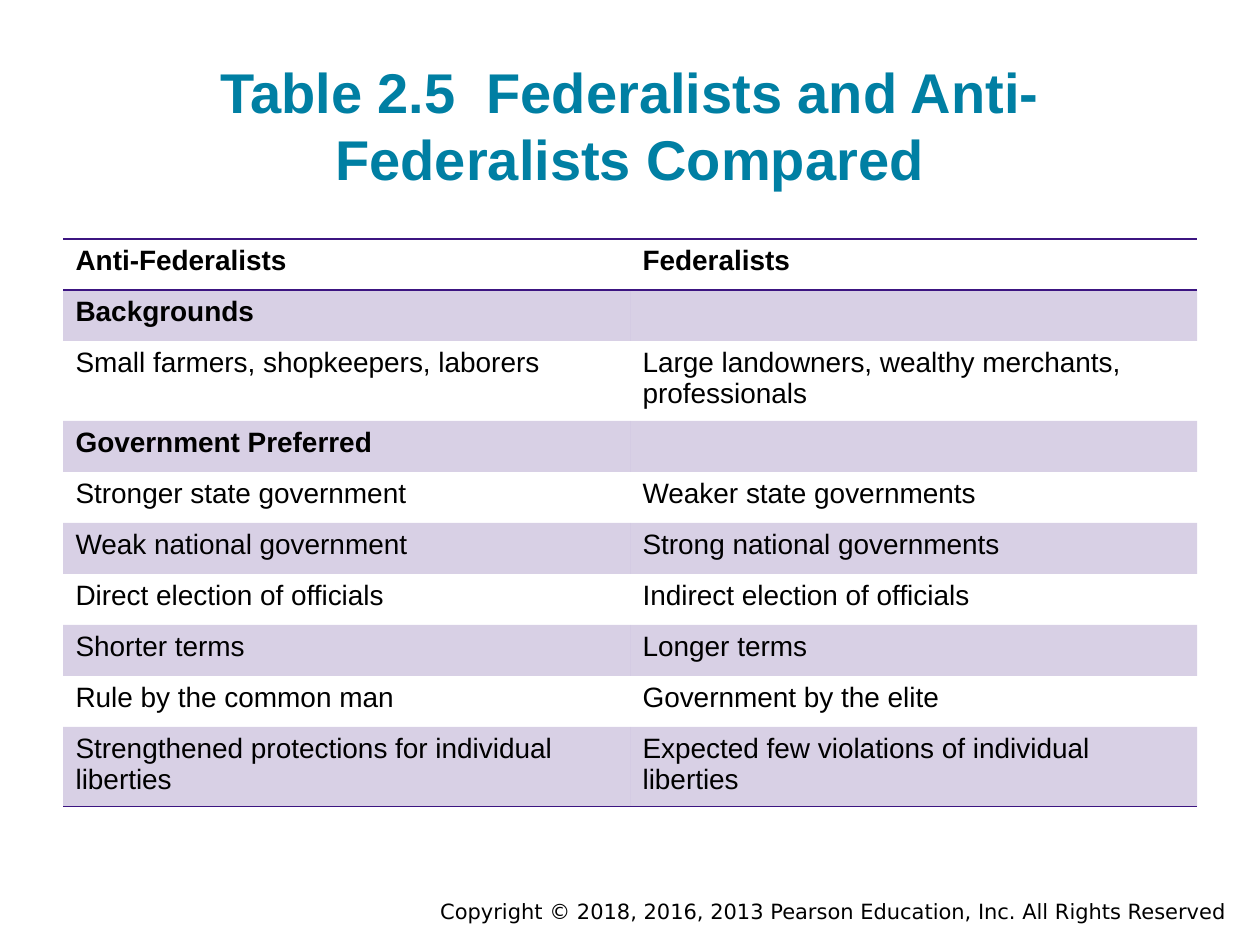
"""Builds a slide with a table that compares Federalists and Anti-Federalists."""
from lxml import etree
from pptx import Presentation
from pptx import util as u
from pptx.dml import color
from pptx.enum import text
from pptx.oxml import ns

EMU_PER_PX = 914400 / 126
COLORS = {"title": "007FA3", "body": "000000", "accent": "3C1581"}
PLAIN_STYLE = "{2D5ABB26-0587-4C30-8999-92F81FD0307C}"
BAND_ALPHA = 20000
ROW_HEIGHT = 51
TALL_ROW_HEIGHT = 75

TITLE_FONT = {"name": "Arial", "size": u.Pt(32), "bold": True}
TABLE_FONT = {"name": "Arial", "size": u.Pt(16)}
FOOTER_FONT = {"name": "DejaVu Sans", "size": u.Pt(12)}

COMPARISON = [
    ("Anti-Federalists", "Federalists"),
    ("Backgrounds", ""),
    ("Small farmers, shopkeepers, laborers",
     "Large landowners, wealthy merchants, professionals"),
    ("Government Preferred", ""),
    ("Stronger state government", "Weaker state governments"),
    ("Weak national government", "Strong national governments"),
    ("Direct election of officials", "Indirect election of officials"),
    ("Shorter terms", "Longer terms"),
    ("Rule by the common man", "Government by the elite"),
    ("Strengthened protections for individual liberties",
     "Expected few violations of individual liberties"),
]
TALL_ROWS = {2, 9}


def px(length):
    return u.Emu(round(length * EMU_PER_PX))


def write(paragraph, wording, color_name, font_format):
    run = paragraph.add_run()
    run.text = wording
    for attribute, value in font_format.items():
        setattr(run.font, attribute, value)
    run.font.color.rgb = color.RGBColor.from_string(COLORS[color_name])


def add_line_of_text(slide, box, wording, color_name, font_format, frame_format, align):
    frame = slide.shapes.add_textbox(*map(px, box)).text_frame
    for attribute, value in frame_format.items():
        setattr(frame, attribute, value)
    frame.paragraphs[0].alignment = align
    write(frame.paragraphs[0], wording, color_name, font_format)


def rule_edge(cell, edge):
    line = etree.SubElement(cell._tc.get_or_add_tcPr(), ns.qn(f"a:{edge}"), w=str(u.Pt(1)))
    fill = etree.SubElement(line, ns.qn("a:solidFill"))
    etree.SubElement(fill, ns.qn("a:srgbClr"), val=COLORS["accent"])


def shade(cell, banded):
    if not banded:
        cell.fill.background()
        return
    cell.fill.solid()
    cell.fill.fore_color.rgb = color.RGBColor.from_string(COLORS["accent"])
    tint = cell._tc.tcPr.find(".//" + ns.qn("a:solidFill") + "[last()]/" + ns.qn("a:srgbClr"))
    for tint in cell._tc.tcPr.findall(f"{ns.qn('a:solidFill')}/{ns.qn('a:srgbClr')}"):
        etree.SubElement(tint, ns.qn("a:alpha"), val=str(BAND_ALPHA))


def add_comparison(slide, left, top, width):
    last = len(COMPARISON) - 1
    heights = [TALL_ROW_HEIGHT if row in TALL_ROWS else ROW_HEIGHT
               for row in range(len(COMPARISON))]
    table = slide.shapes.add_table(
        len(COMPARISON), 2, px(left), px(top), px(width), px(sum(heights))).table
    table.first_row = table.horz_banding = False
    table._tbl.tblPr.find(ns.qn("a:tableStyleId")).text = PLAIN_STYLE
    for row, (pair, height) in enumerate(zip(COMPARISON, heights)):
        table.rows[row].height = px(height)
        heading = row == 0 or not pair[1]
        for column, wording in enumerate(pair):
            cell = table.cell(row, column)
            if row == 0:
                rule_edge(cell, "lnT")
            if row in (0, last):
                rule_edge(cell, "lnB")
            shade(cell, row % 2 == 1)
            if wording:
                write(cell.text_frame.paragraphs[0], wording, "body",
                      {**TABLE_FONT, "bold": heading})


def main():
    deck = Presentation()
    deck.slide_width, deck.slide_height = px(1260), px(945)
    slide = deck.slides.add_slide(deck.slide_layouts[6])
    add_line_of_text(
        slide, (252, 892, 987, 38),
        "Copyright © 2018, 2016, 2013 Pearson Education, Inc. All Rights Reserved",
        "body", FOOTER_FONT, {"word_wrap": True}, text.PP_ALIGN.RIGHT)
    add_line_of_text(
        slide, (63, 48, 1134, 157),
        "Table 2.5  Federalists and Anti-Federalists Compared", "title", TITLE_FONT,
        {"word_wrap": True, "vertical_anchor": text.MSO_ANCHOR.BOTTOM,
         "margin_top": px(13), "margin_bottom": px(13)},
        text.PP_ALIGN.CENTER)
    add_comparison(slide, 63, 239, 1134)
    deck.save("out.pptx")


if __name__ == "__main__":
    main()
